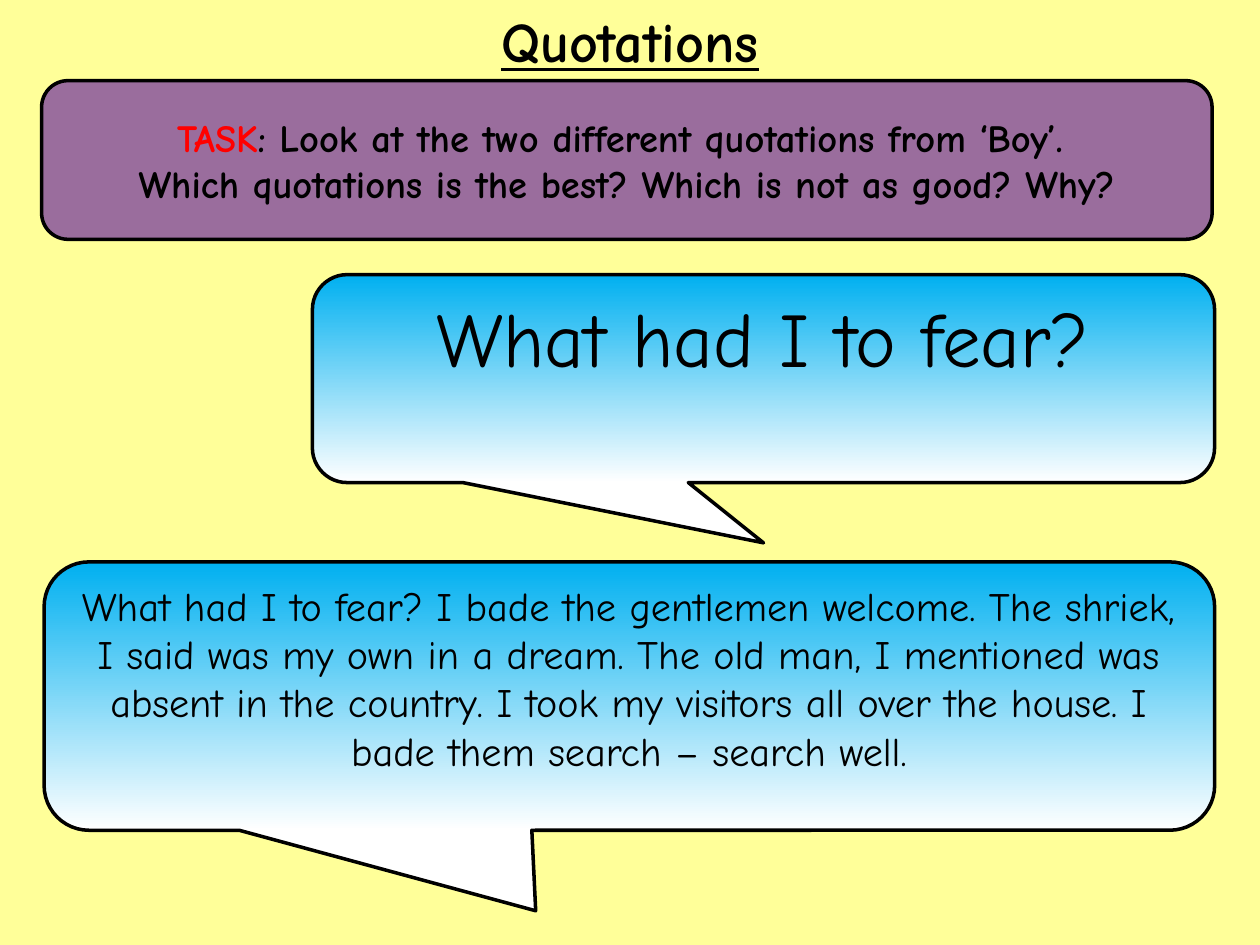
from dataclasses import dataclass

from lxml import etree
from pptx import Presentation
from pptx.dml.color import RGBColor
from pptx.enum.shapes import MSO_SHAPE
from pptx.enum.text import MSO_ANCHOR, MSO_AUTO_SIZE, PP_ALIGN
from pptx.oxml.ns import qn
from pptx.util import Pt

EMU_PER_PX = 9144  # 100 px to the inch
FONT = "Comic Neue"
BLACK, RED, PURPLE = "000000", "FF0000", "7030A0"
SKY, WHITE, CREAM = "00B0F0", "FFFFFF", "FFFF99"
CENTER = PP_ALIGN.CENTER
MIDDLE, TOP = MSO_ANCHOR.MIDDLE, MSO_ANCHOR.TOP
GROW = MSO_AUTO_SIZE.SHAPE_TO_FIT_TEXT
ROUNDED = MSO_SHAPE.ROUNDED_RECTANGLE
CALLOUT = MSO_SHAPE.ROUNDED_RECTANGULAR_CALLOUT
CORNER = 0.167


@dataclass
class Box:
    left: int
    top: int
    width: int
    height: int

    def emu(self) -> list[int]:
        return [px * EMU_PER_PX
                for px in (self.left, self.top, self.width, self.height)]


@dataclass
class Quotation:
    box: Box
    tip: tuple[float, float]
    text: str
    size: int


QUOTATIONS = [
    Quotation(Box(248, 218, 716, 165), (0, 0.79), "What had I to fear?", 44),
    Quotation(
        Box(35, 446, 929, 213), (-0.08, 0.8),
        "What had I to fear? I bade the gentlemen welcome. The shriek, "
        "I said was my own in a dream. The old man, I mentioned was absent "
        "in the country. I took my visitors all over the house. "
        "I bade them search – search well.", 23),
]


def color(value: str) -> RGBColor:
    return RGBColor.from_string(value)


def style_paragraph(paragraph, size: int, bold: bool = False) -> None:
    paragraph.alignment = CENTER
    font = paragraph.font
    font.name, font.size, font.bold = FONT, Pt(size), bold
    font.color.rgb = color(BLACK)


def space_before(paragraph, percent: int) -> None:
    properties = paragraph._p.get_or_add_pPr()
    spacing = etree.Element(qn("a:spcBef"))
    etree.SubElement(spacing, qn("a:spcPct"), val=str(percent * 1000))
    properties.insert(0, spacing)


def add_panel(slide, kind, box: Box, adjustments: tuple[float, ...]):
    shape = slide.shapes.add_shape(kind, *box.emu())
    shape.shadow.inherit = False
    for index, value in enumerate(adjustments):
        shape.adjustments[index] = value
    shape.line.color.rgb = color(BLACK)
    shape.line.width = Pt(2)
    return shape


def add_title(slide, text: str) -> None:
    frame = slide.shapes.add_textbox(*Box(0, 0, 1000, 94).emu()).text_frame
    frame.word_wrap = True
    frame.auto_size = GROW
    paragraph = frame.paragraphs[0]
    paragraph.text = text
    style_paragraph(paragraph, 32, bold=True)
    paragraph.font.underline = True
    space_before(paragraph, 50)


def add_task(slide) -> None:
    shape = add_panel(slide, ROUNDED, Box(33, 64, 929, 126), (CORNER,))
    shape.fill.solid()
    shape.fill.fore_color.rgb = color(PURPLE)
    fill_color = shape.fill._xPr.find(qn("a:solidFill"))[0]
    etree.SubElement(fill_color, qn("a:alpha"), val="70000")

    frame = shape.text_frame
    frame.word_wrap = False
    frame.vertical_anchor = MIDDLE
    instruction, question = frame.paragraphs[0], frame.add_paragraph()
    label = instruction.add_run()
    label.text = "TASK"
    label.font.color.rgb = color(RED)
    instruction.add_run().text = (
        ": Look at the two different quotations from ‘Boy’. ")
    question.text = "Which quotations is the best? Which is not as good? Why?"
    for paragraph in frame.paragraphs:
        style_paragraph(paragraph, 22, bold=True)
    for run in instruction.runs[1:] + question.runs:
        run.font.color.rgb = color(BLACK)


def add_quotation(slide, quotation: Quotation) -> None:
    shape = add_panel(slide, CALLOUT, quotation.box, (*quotation.tip, CORNER))
    shape.fill.gradient()
    shape.fill.gradient_angle = 270  # top to bottom
    for stop, value in zip(shape.fill.gradient_stops, (SKY, WHITE)):
        stop.color.rgb = color(value)

    frame = shape.text_frame
    frame.word_wrap = True
    frame.vertical_anchor = TOP
    paragraph = frame.paragraphs[0]
    paragraph.text = quotation.text
    style_paragraph(paragraph, quotation.size)
    paragraph.runs[0].font.color.rgb = color(BLACK)
    space_before(paragraph, 50)


def main() -> None:
    presentation = Presentation()
    presentation.slide_width = 1000 * EMU_PER_PX
    presentation.slide_height = 750 * EMU_PER_PX
    slide = presentation.slides.add_slide(presentation.slide_layouts[6])

    # Background
    slide.background.fill.solid()
    slide.background.fill.fore_color.rgb = color(CREAM)

    # Title, task and speech bubbles
    add_title(slide, "Quotations")
    add_task(slide)
    for quotation in QUOTATIONS:
        add_quotation(slide, quotation)

    presentation.save("out.pptx")


if __name__ == "__main__":
    main()
